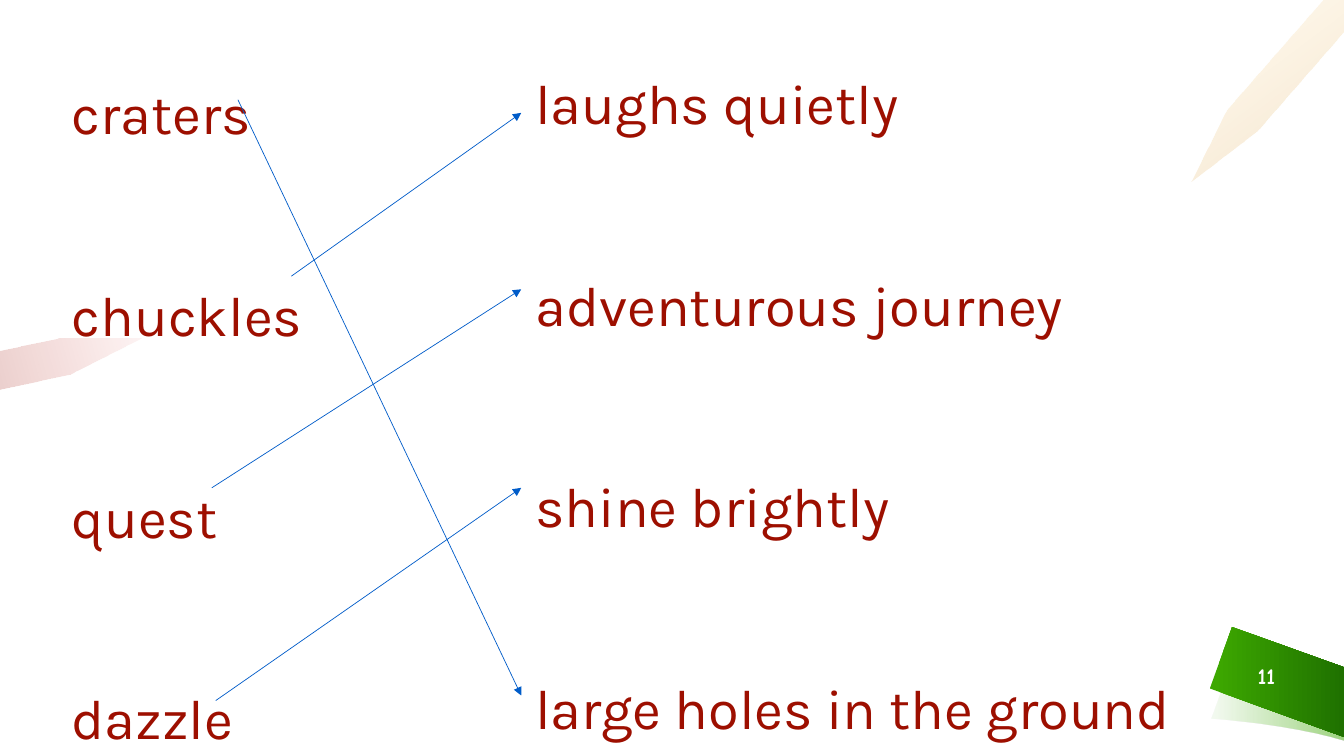
"""Vocabulary slide: words on the left joined by arrows to their meanings."""
from pptx import Presentation
from pptx.dml.color import RGBColor
from pptx.enum.text import MSO_ANCHOR, MSO_AUTO_SIZE, PP_ALIGN
from pptx.enum.shapes import MSO_CONNECTOR
from pptx.oxml.ns import qn
from pptx.util import Inches, Pt
from lxml import etree

LEFT, CENTER = PP_ALIGN.LEFT, PP_ALIGN.CENTER
TOP, MIDDLE = MSO_ANCHOR.TOP, MSO_ANCHOR.MIDDLE
STRAIGHT = MSO_CONNECTOR.STRAIGHT
NO_AUTOFIT = MSO_AUTO_SIZE.NONE
COLORS = {
    "word": "9D0F00", "arrow": "005CC9", "number": "FFFFFF",
    "green": "3DA800", "dark green": "1F7100", "red": "D30F00",
    "yellow": "FFAA00", "ochre": "C07400",
}


def write(box, lines, size=40, font="Karla", color="word", bold=False,
          align=LEFT, anchor=TOP, spacing=1.0, gap=0):
    """Fill a box with one unbulleted paragraph per line."""
    frame = box.text_frame
    frame.word_wrap = True
    frame.auto_size = NO_AUTOFIT
    frame.vertical_anchor = anchor
    for index, line in enumerate(lines):
        paragraph = frame.add_paragraph() if index else frame.paragraphs[0]
        properties = paragraph._p.get_or_add_pPr()
        properties.set("marL", "0")
        properties.set("indent", "0")
        etree.SubElement(properties, qn("a:buNone"))
        paragraph.alignment = align
        paragraph.line_spacing = spacing
        paragraph.space_before = Pt(gap if index else 0)
        run = paragraph.add_run()
        run.text = line
        run.font.size = Pt(size)
        run.font.name = font
        run.font.bold = bold
        run.font.color.rgb = RGBColor.from_string(COLORS[color])


def curve(start, control1, control2, end, steps=12):
    """Return points along a cubic curve, without its start."""
    points = []
    for step in range(1, steps + 1):
        t = step / steps
        weights = ((1 - t) ** 3, 3 * t * (1 - t) ** 2, 3 * t * t * (1 - t), t ** 3)
        corners = (start, control1, control2, end)
        points.append(tuple(sum(w * c[axis] for w, c in zip(weights, corners))
                            for axis in (0, 1)))
    return points


presentation = Presentation()
presentation.slide_width = Inches(13.33)
presentation.slide_height = Inches(7.5)
slide = presentation.slides.add_slide(presentation.slide_layouts[3])
title, words, meanings = slide.placeholders
title.element.getparent().remove(title.element)

eraser_shadow = (
    [(12.02, 7.13)]
    + curve((12.02, 7.13), (12.02, 7.13), (12.78, 7.18), (13.33, 7.35))
    + [(13.33, 6.68)]
    + curve((13.33, 6.68), (12.72, 6.51), (12.24, 6.52), (12.24, 6.52))
)
eraser = [(13.33, 6.62), (12.22, 6.22), (12, 6.83), (13.33, 7.31)]
red_pencil = [(1.4, 3.36), (0.58, 3.36), (0, 3.48), (0, 3.86), (0.7, 3.71)]
yellow_pencil = [(13.12, 0), (12.17, 1.09), (11.82, 1.8), (12.47, 1.3),
                 (13.33, 0.31), (13.33, 0)]
decorations = [
    (eraser_shadow, 0, [(0.03, "green", 6), (1, "green", 50)]),
    (eraser, 0, [(0.03, "green", 100), (1, "dark green", 100)]),
    (red_pencil, 164, [(0, "red", 5), (1, "word", 20)]),
    (yellow_pencil, 53, [(0, "yellow", 5), (1, "ochre", 20)]),
]
for outline, angle, stops in decorations:
    points = [(Inches(x), Inches(y)) for x, y in outline]
    builder = slide.shapes.build_freeform(*points[0])
    builder.add_line_segments(points[1:], close=True)
    decoration = builder.convert_to_shape()
    decoration.shadow.inherit = False
    decoration.line.fill.background()
    decoration.fill.gradient()
    decoration.fill.gradient_angle = -angle % 360
    for stop, (position, color, opacity) in zip(decoration.fill.gradient_stops, stops):
        stop.position = position
        stop.color.rgb = RGBColor.from_string(COLORS[color])
    for node, (position, color, opacity) in zip(
            decoration.element.iter(qn("a:srgbClr")), stops):
        etree.SubElement(node, qn("a:alpha")).set("val", str(opacity * 1000))

page_number = slide.shapes.add_textbox(Inches(12.21), Inches(6.5), Inches(0.7), Inches(0.4))
write(page_number, ["11"], size=16, font="Comic Neue", color="number",
      bold=True, align=CENTER, anchor=MIDDLE)

columns = [
    (words, (0.61, -0.6, 6.56, 7.8), 3, 0,
     ["craters", "chuckles", "quest", "dazzle"]),
    (meanings, (5.21, 0.3, 8.13, 7.05), 1.5, 72,
     ["laughs quietly", "adventurous journey", "shine brightly",
      "large holes in the ground"]),
]
for column, place, spacing, gap, lines in columns:
    column.left, column.top, column.width, column.height = map(Inches, place)
    write(column, lines, spacing=spacing, gap=gap)
    slide.shapes.element.append(column.element)

arrow_tip_x = 5.17
matches = [(2.36, 0.99, 6.9), (2.89, 2.74, 1.12), (2.1, 4.84, 2.87), (2.14, 6.95, 4.84)]
for word_x, word_y, meaning_y in matches:
    arrow = slide.shapes.add_connector(
        STRAIGHT, Inches(word_x), Inches(word_y), Inches(arrow_tip_x), Inches(meaning_y))
    arrow.line.color.rgb = RGBColor.from_string(COLORS["arrow"])
    arrow.line.width = Pt(0.5)
    etree.SubElement(arrow.line._get_or_add_ln(), qn("a:tailEnd")).set("type", "triangle")
    etree.SubElement(arrow.element.spPr, qn("a:effectLst"))

presentation.save("out.pptx")
